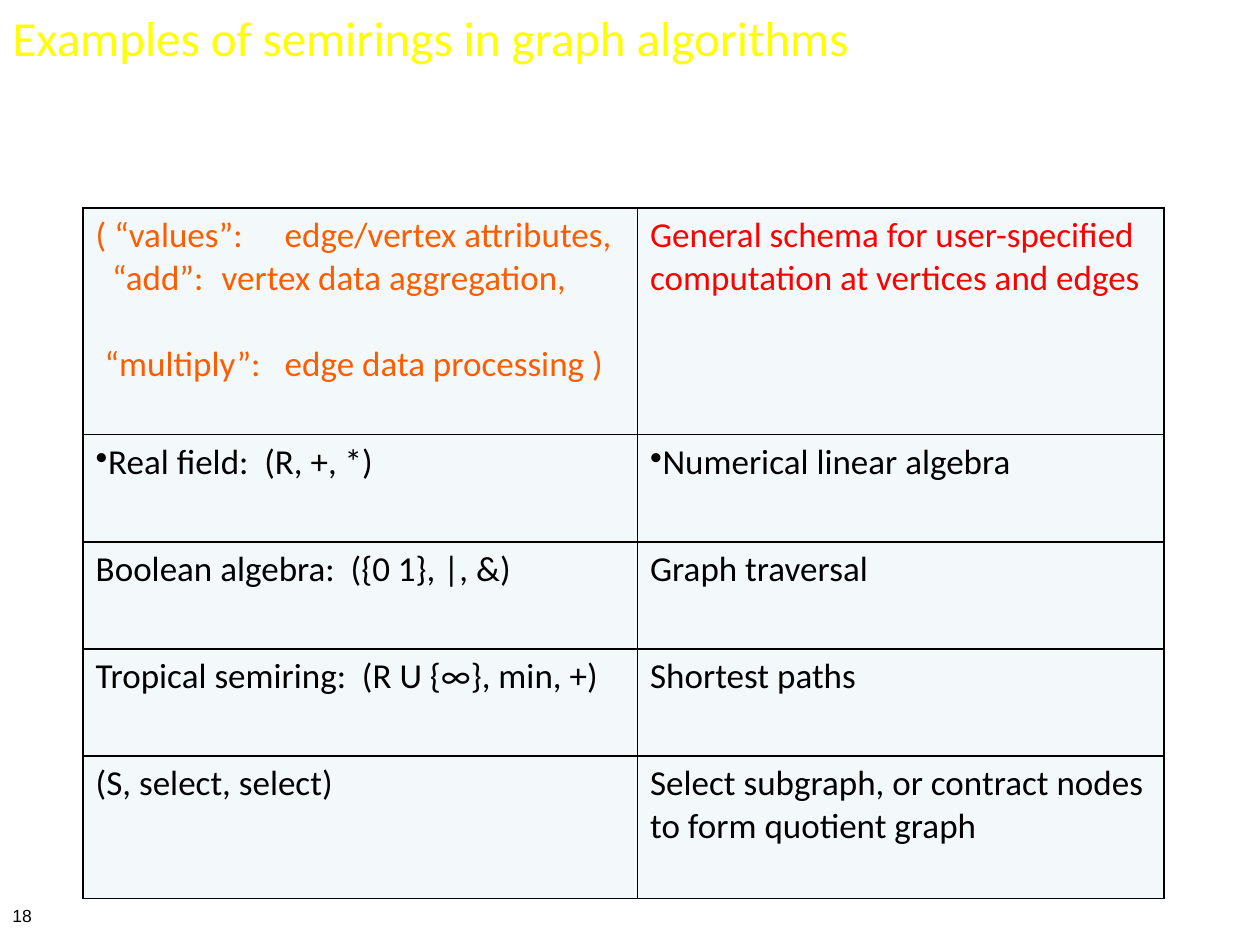
from dataclasses import dataclass

from lxml.etree import SubElement
from pptx import Presentation
from pptx.dml.color import RGBColor
from pptx.enum.text import MSO_ANCHOR, PP_ALIGN
from pptx.oxml.ns import qn
from pptx.util import Inches, Pt

BLACK, ORANGE, RED = "000000", "FF5C00", "FF0000"
YELLOW, PALE = "FFFF00", "F3F9FA"
TAB_STOP = 1.41
COLUMN_WIDTHS = (4.4, 4.18)


@dataclass(frozen=True)
class Line:
    text: str
    color: str = BLACK
    bullet: bool = False
    indent: float = 0
    before: float = 0


@dataclass(frozen=True)
class Row:
    height: float
    semiring: tuple[Line, ...]
    use: Line


ROWS = (
    Row(1.8, (
        Line("( “values”:\tedge/vertex attributes,", ORANGE),
        Line("“add”:\tvertex data aggregation,", ORANGE, indent=0.13),
        Line("“multiply”:\tedge data processing )", ORANGE, indent=0.07, before=24.4),
    ), Line("General schema for user-specified computation at vertices and edges", RED)),
    Row(0.85, (Line("Real field:  (R, +, *)", bullet=True),),
        Line("Numerical linear algebra", bullet=True)),
    Row(0.85, (Line("Boolean algebra:  ({0 1}, |, &)"),), Line("Graph traversal")),
    Row(0.85, (Line("Tropical semiring:  (R U {∞}, min, +)"),), Line("Shortest paths")),
    Row(1.13, (Line("(S, select, select)"),),
        Line("Select subgraph, or contract nodes to form quotient graph")),
)


def rgb(color: str) -> RGBColor:
    return RGBColor.from_string(color)


def add_span(para, text: str, font: str, size: float, color: str) -> None:
    span = para.add_run()
    span.text = text
    span.font.name = font
    span.font.size = Pt(size)
    span.font.color.rgb = rgb(color)


def add_line(para, line: Line) -> None:
    properties = para._p.get_or_add_pPr()
    properties.set("marL", "0")
    properties.set("indent", str(Inches(line.indent)))
    if line.bullet:
        SubElement(properties, qn("a:buChar"), char="•")
    if "\t" in line.text:
        tabs = SubElement(properties, qn("a:tabLst"))
        SubElement(tabs, qn("a:tab"), pos=str(Inches(TAB_STOP)), algn="l")
    if line.before:
        para.space_before = Pt(line.before)
    # Each tab is its own piece of the run, so the columns share one stop.
    add_span(para, line.text, "Calibri", 20, line.color)


def add_borders(cell) -> None:
    properties = cell._tc.get_or_add_tcPr()
    for position, side in enumerate(("lnL", "lnR", "lnT", "lnB")):
        border = properties.makeelement(qn(f"a:{side}"), {"w": str(Pt(1))})
        fill = SubElement(border, qn("a:solidFill"))
        SubElement(fill, qn("a:srgbClr"), val=BLACK)
        properties.insert(position, border)


def fill_cell(cell, lines: tuple[Line, ...]) -> None:
    cell.fill.solid()
    cell.fill.fore_color.rgb = rgb(PALE)
    add_borders(cell)
    frame = cell.text_frame
    for index, line in enumerate(lines):
        add_line(frame.add_paragraph() if index else frame.paragraphs[0], line)


def add_title(page, text: str) -> None:
    title = page.shapes.title
    title.left, title.top = Inches(0), Inches(0)
    title.width, title.height = Inches(9.75), Inches(0.59)
    frame = title.text_frame
    frame.vertical_anchor = MSO_ANCHOR.MIDDLE
    para = frame.paragraphs[0]
    para.alignment = PP_ALIGN.LEFT
    add_span(para, text, "Calibri", 28, YELLOW)


def add_semiring_table(page) -> None:
    height = sum(row.height for row in ROWS)
    table = page.shapes.add_table(
        len(ROWS), len(COLUMN_WIDTHS), Inches(0.66), Inches(1.65),
        Inches(sum(COLUMN_WIDTHS)), Inches(height)).table
    table.first_row = table.horz_banding = False
    for column, width in zip(table.columns, COLUMN_WIDTHS):
        column.width = Inches(width)
    for index, row in enumerate(ROWS):
        table.rows[index].height = Inches(row.height)
        fill_cell(table.cell(index, 0), row.semiring)
        fill_cell(table.cell(index, 1), (row.use,))


def add_page_number(page, number: str) -> None:
    box = page.shapes.add_textbox(Inches(0), Inches(7.13), Inches(0.58), Inches(0.27))
    box.text_frame.word_wrap = True
    add_span(box.text_frame.paragraphs[0], number, "Arial", 10, BLACK)


def main() -> None:
    deck = Presentation()
    deck.slide_width, deck.slide_height = Inches(10), Inches(7.5)
    page = deck.slides.add_slide(deck.slide_layouts[5])
    add_title(page, "Examples of semirings in graph algorithms")
    add_semiring_table(page)
    add_page_number(page, "18")
    deck.save("out.pptx")


if __name__ == "__main__":
    main()
